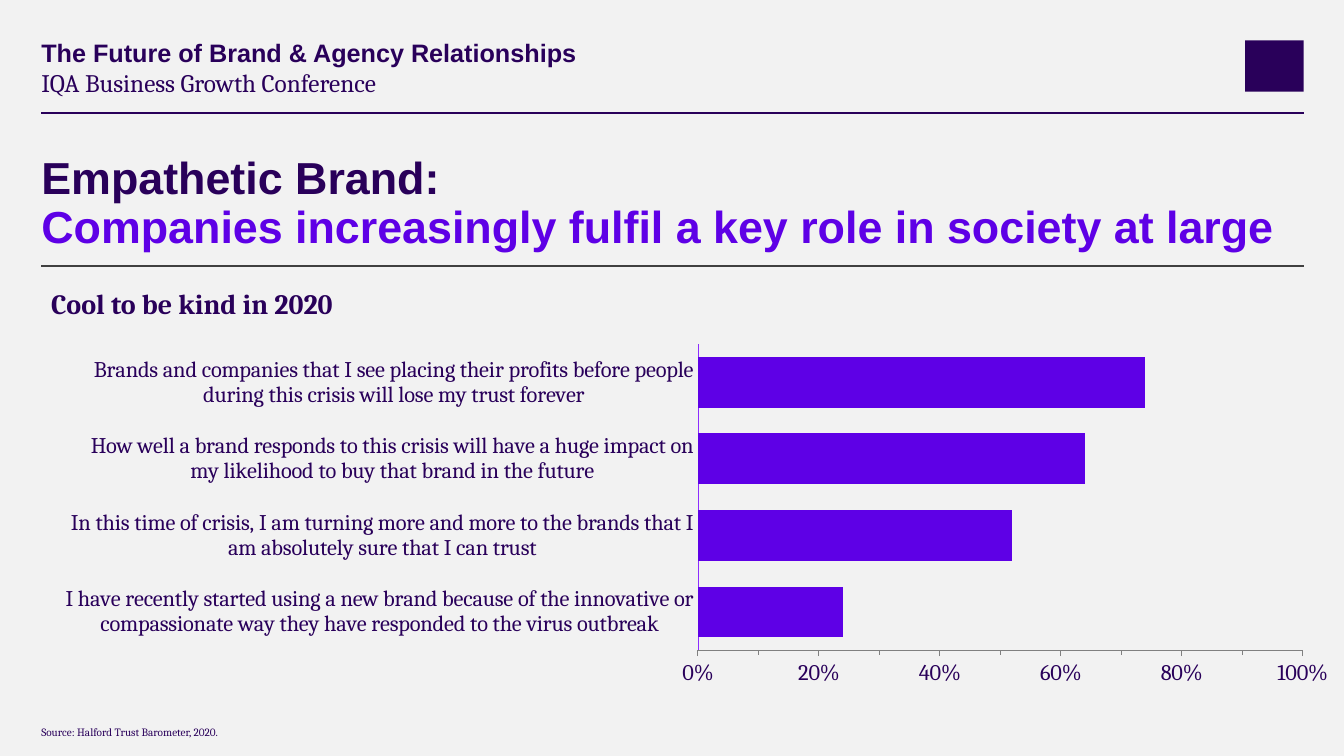
import pptx
import pptx.util
import pptx.dml.color
import pptx.chart.data
import pptx.enum.chart
import pptx.enum.shapes
import lxml.etree

INK, VIOLET, GREY = "29005A", "5E00E6", "404040"
LEFT, RIGHT = 0.41, 12.93
WIDTH = RIGHT - LEFT

texts = [
    dict(box=(LEFT, 0.4, 8.27, 0.27), size=18, font="Arial", bold=True, spacing=0.9,
         lines=[("The Future of Brand & Agency Relationships", INK)]),
    dict(box=(LEFT, 0.7, 8.27, 0.27), size=18, font="Cambria", spacing=0.9,
         lines=[("IQA Business Growth Conference", INK)]),
    dict(box=(LEFT, 1.55, WIDTH, 0.97), size=32, font="Arial", bold=True, spacing=0.9,
         lines=[("Empathetic Brand: ", INK),
                ("Companies increasingly fulfil a key role in society at large", VIOLET)]),
    dict(box=(LEFT, 2.79, 12.28, 0.44), size=20, font="Cambria", bold=True, inset=(0.1, 0.05),
         lines=[("Cool to be kind in 2020", INK)]),
    dict(box=(LEFT, 7.2, 12.2, 0.13), size=8, font="Cambria",
         lines=[("Source: Halford Trust Barometer, 2020.", INK)]),
]
rules = [(1.12, INK), (2.64, GREY)]
answers = [
    ("I have recently started using a new brand because of the innovative or "
     "compassionate way they have responded to the virus outbreak", 0.24),
    ("In this time of crisis, I am turning more and more to the brands that I "
     "am absolutely sure that I can trust", 0.52),
    ("How well a brand responds to this crisis will have a huge impact on my "
     "likelihood to buy that brand in the future", 0.64),
    ("Brands and companies that I see placing their profits before people "
     "during this crisis will lose my trust forever", 0.74),
]
plot_shares = {"x": 0.5, "y": 0.01, "w": 0.48, "h": 0.89}


def color(value):
    return pptx.dml.color.RGBColor.from_string(value)


def inches(*values):
    return [pptx.util.Inches(v) for v in values]


def add_text(slide, box, size, font, lines, bold=False, spacing=None, inset=(0, 0)):
    frame = slide.shapes.add_textbox(*inches(*box)).text_frame
    frame.word_wrap = True
    frame.margin_left, frame.margin_top = inches(*inset)
    frame.margin_right, frame.margin_bottom = inches(*inset)
    paragraph = frame.paragraphs[0]
    paragraph.line_spacing = spacing
    paragraph.font.size = pptx.util.Pt(size)
    paragraph.font.name = font
    paragraph.font.bold = bold
    for index, (words, ink) in enumerate(lines):
        if index:
            paragraph.add_line_break()
        run = paragraph.add_run()
        run.text = words
        run.font.color.rgb = color(ink)


def add_rule(slide, y, ink):
    rule = slide.shapes.add_connector(
        pptx.enum.shapes.MSO_CONNECTOR.STRAIGHT, *inches(LEFT, y, RIGHT, y))
    rule.line.color.rgb = color(ink)
    rule.line.width = pptx.util.Pt(1.5)
    lxml.etree.SubElement(rule._element.spPr, pptx.oxml.ns.qn("a:effectLst"))


def style_axis(axis, ink, width):
    axis.has_major_gridlines = False
    axis.format.line.color.rgb = color(ink)
    axis.format.line.width = pptx.util.Pt(width)


def add_answers(slide):
    data = pptx.chart.data.CategoryChartData(number_format="0%")
    data.categories = [answer for answer, _ in answers]
    data.add_series("Series 1", [share for _, share in answers])
    chart = slide.shapes.add_chart(
        pptx.enum.chart.XL_CHART_TYPE.BAR_CLUSTERED,
        *inches(0.65, 3.38, WIDTH, 3.42), data).chart
    chart.has_legend = chart.has_title = False
    chart.font.name = "Cambria"
    chart.font.size = pptx.util.Pt(16)
    chart.font.color.rgb = color(INK)

    bars = chart.plots[0]
    bars.gap_width = 50
    bars.vary_by_categories = False
    fill = bars.series[0].format.fill
    fill.solid()
    fill.fore_color.rgb = color(VIOLET)

    tick = pptx.enum.chart.XL_TICK_MARK
    style_axis(chart.category_axis, "8D2DFF", 0.21)
    chart.category_axis.major_tick_mark = tick.NONE
    shares = chart.value_axis
    style_axis(shares, "808080", 0.75)
    shares.minimum_scale, shares.maximum_scale = 0, 1
    shares.major_unit, shares.minor_unit = 0.2, 0.1
    shares.major_tick_mark = shares.minor_tick_mark = tick.OUTSIDE
    shares.tick_labels.number_format = "0%"
    shares.tick_labels.number_format_is_linked = False

    qn = pptx.oxml.ns.qn
    area = chart._chartSpace.chart.plotArea
    for old in area.findall(qn("c:layout")):
        area.remove(old)
    layout = lxml.etree.Element(qn("c:layout"))
    area.insert(0, layout)
    manual = lxml.etree.SubElement(layout, qn("c:manualLayout"))
    settings = {"layoutTarget": "inner", "xMode": "edge", "yMode": "edge", **plot_shares}
    for tag, value in settings.items():
        lxml.etree.SubElement(manual, qn("c:" + tag), val=str(value))


def main():
    deck = pptx.Presentation()
    deck.slide_width, deck.slide_height = inches(13.33, 7.5)
    slide = deck.slides.add_slide(deck.slide_layouts[6])
    slide.background.fill.solid()
    slide.background.fill.fore_color.rgb = color("F2F2F2")

    emblem = slide.shapes.add_shape(
        pptx.enum.shapes.MSO_SHAPE.RECTANGLE, *inches(12.35, 0.4, RIGHT - 12.35, 0.51))
    emblem.shadow.inherit = False
    emblem.fill.solid()
    emblem.fill.fore_color.rgb = color(INK)
    emblem.line.fill.background()

    for y, ink in rules:
        add_rule(slide, y, ink)
    for text in texts:
        add_text(slide, **text)
    add_answers(slide)
    deck.save("out.pptx")


if __name__ == "__main__":
    main()
